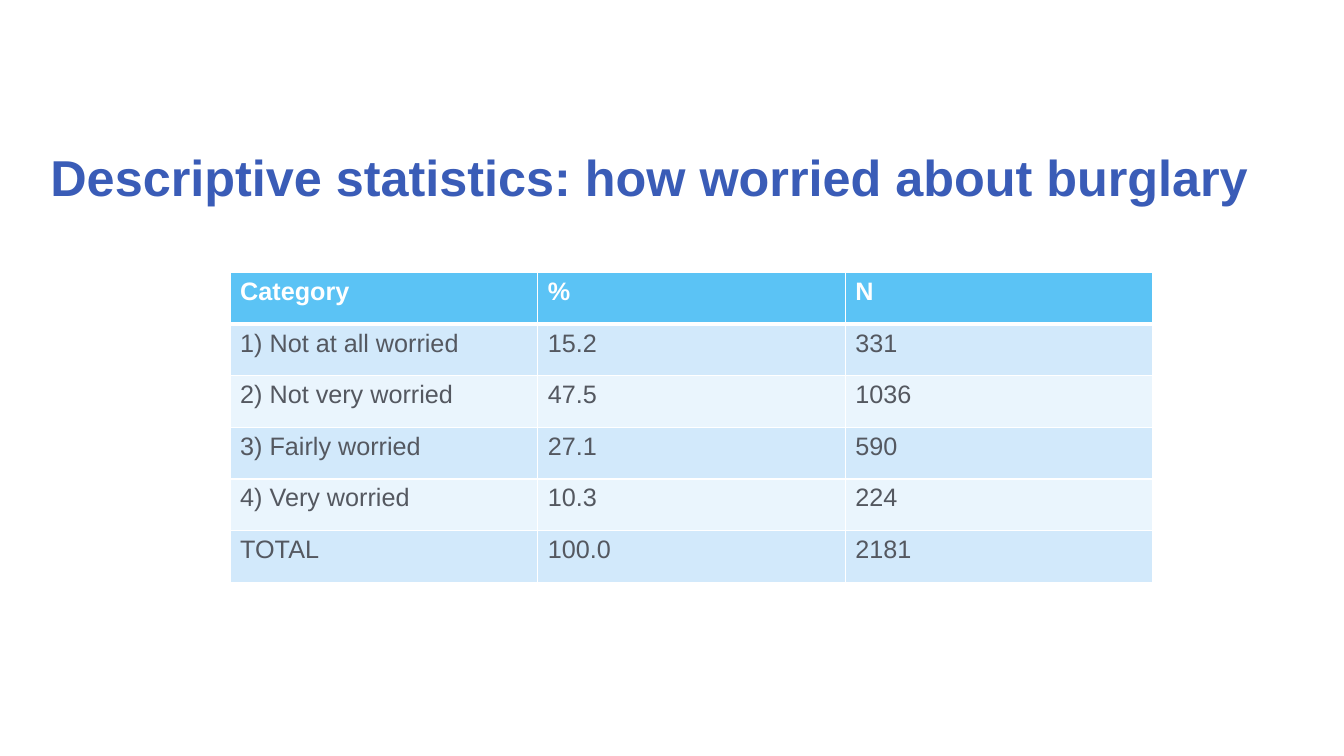
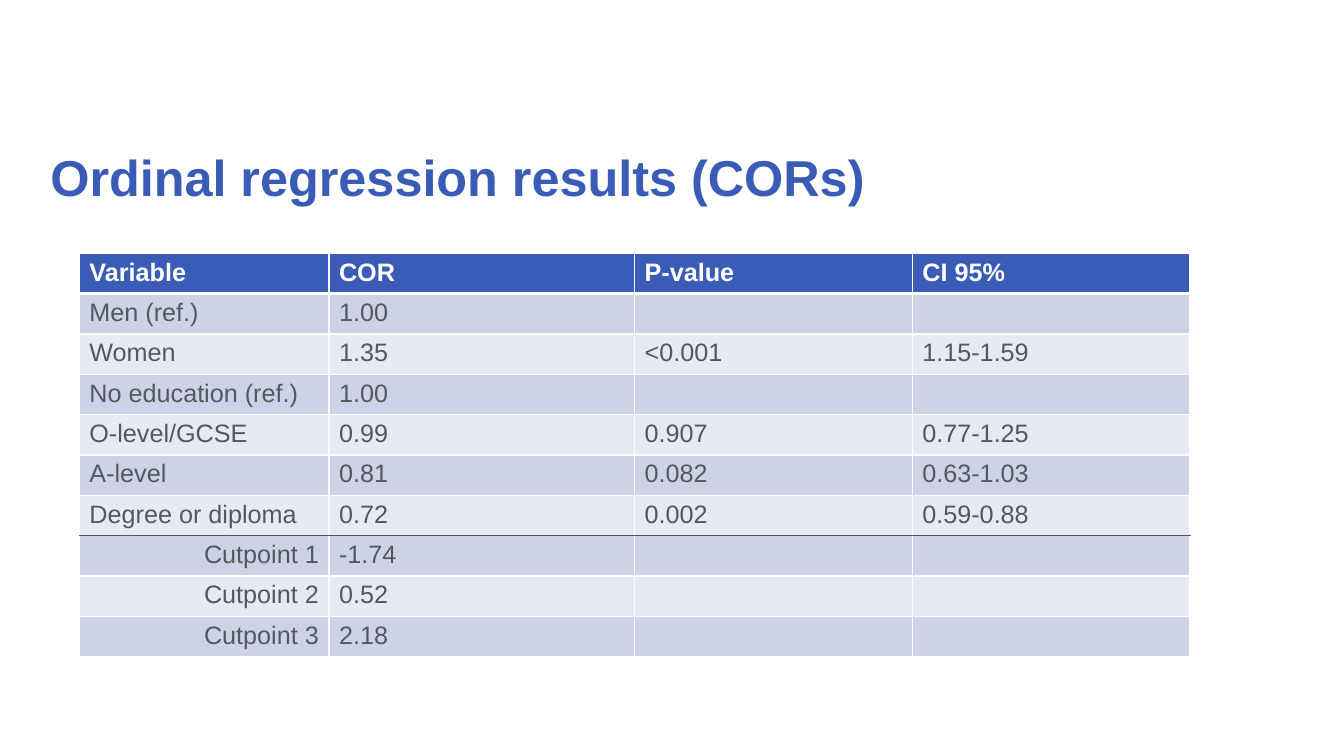
from dataclasses import dataclass
from typing import Optional

from lxml import etree
from pptx import Presentation
from pptx.dml.color import RGBColor
from pptx.enum.text import MSO_ANCHOR, PP_ALIGN
from pptx.oxml.ns import qn
from pptx.util import Cm, Pt

MIDDLE = MSO_ANCHOR.MIDDLE
LEFT = PP_ALIGN.LEFT
RIGHT = PP_ALIGN.RIGHT

COLOURS = {
    "white": "FFFFFF",
    "blue": "3A5CB7",
    "sky": "5BC3F5",
    "text": "545860",
    "sky_band": "D2E9FB",
    "sky_pale": "EAF5FD",
    "blue_band": "CED2E6",
    "blue_pale": "E8EAF3",
}

# Shared text formats
TITLE_FORMAT = {"name": "Arial", "size": Pt(36), "bold": True}
HEADER_FORMAT = {"name": "Arial", "size": Pt(18), "bold": True}
BODY_FORMAT = {"name": "Arial", "size": Pt(18), "bold": False}


@dataclass(frozen=True)
class Palette:
    header: str
    band: str
    pale: str


@dataclass(frozen=True)
class Border:
    colour: str
    points: int


@dataclass(frozen=True)
class TablePage:
    title: str
    left: float
    top: float
    column_widths: tuple[float, ...]
    row_height: float
    palette: Palette
    rows: tuple[tuple[str, ...], ...]
    rule_after: Optional[int] = None  # last row above the dark rule


THIN = Border("white", 1)
THICK = Border("white", 3)
RULE = Border("text", 1)

PAGES = (
    TablePage(
        title="Descriptive statistics: how worried about burglary",
        left=5.8, top=6.87, column_widths=(7.75,) * 3, row_height=1.3,
        palette=Palette("sky", "sky_band", "sky_pale"),
        rows=(
            ("Category", "%", "N"),
            ("1) Not at all worried", "15.2", "331"),
            ("2) Not very worried", "47.5", "1036"),
            ("3) Fairly worried", "27.1", "590"),
            ("4) Very worried", "10.3", "224"),
            ("TOTAL", "100.0", "2181"),
        ),
    ),
    TablePage(
        title="Ordinal regression results (CORs)",
        left=2, top=6.38, column_widths=(6.29, 7.7, 7, 7), row_height=0.99,
        palette=Palette("blue", "blue_band", "blue_pale"),
        rows=(
            ("Variable", "COR", "P-value", "CI 95%"),
            ("Men (ref.)", "1.00", "", ""),
            ("Women", "1.35", "<0.001", "1.15-1.59"),
            ("No education (ref.)", "1.00", "", ""),
            ("O-level/GCSE", "0.99", "0.907", "0.77-1.25"),
            ("A-level", "0.81", "0.082", "0.63-1.03"),
            ("Degree or diploma", "0.72", "0.002", "0.59-0.88"),
            ("Cutpoint 1", "-1.74", "", ""),
            ("Cutpoint 2", "0.52", "", ""),
            ("Cutpoint 3", "2.18", "", ""),
        ),
        rule_after=6,
    ),
)


def rgb(colour: str) -> RGBColor:
    return RGBColor.from_string(COLOURS[colour])


def write(paragraph, text: str, text_format: dict, colour: str) -> None:
    span = paragraph.add_run()
    span.text = text
    for attribute, value in text_format.items():
        setattr(span.font, attribute, value)
    span.font.color.rgb = rgb(colour)


def add_title(page, text: str) -> None:
    box = page.shapes.add_textbox(Cm(1.02), Cm(2.69), Cm(31.85), Cm(3.68))
    frame = box.text_frame
    frame.word_wrap = True
    frame.vertical_anchor = MIDDLE
    paragraph = frame.paragraphs[0]
    paragraph.line_spacing = 0.9
    write(paragraph, text, TITLE_FORMAT, "blue")


def set_borders(cell, above: Border, below: Border) -> None:
    properties = cell._tc.get_or_add_tcPr()
    edges = {"a:lnL": THIN, "a:lnR": THIN, "a:lnT": above, "a:lnB": below}
    for tag, border in edges.items():
        line = etree.SubElement(properties, qn(tag), w=str(Pt(border.points)))
        fill = etree.SubElement(line, qn("a:solidFill"))
        etree.SubElement(fill, qn("a:srgbClr"), val=COLOURS[border.colour])


def border_below(content: TablePage, row: int) -> Border:
    if row == 0:
        return THICK
    return RULE if row == content.rule_after else THIN


def add_data_table(page, content: TablePage) -> None:
    row_count = len(content.rows)
    table = page.shapes.add_table(
        row_count, len(content.column_widths), Cm(content.left), Cm(content.top),
        Cm(sum(content.column_widths)), Cm(content.row_height * row_count),
    ).table
    for column, width in zip(table.columns, content.column_widths):
        column.width = Cm(width)

    palette = content.palette
    for row, values in enumerate(content.rows):
        table.rows[row].height = Cm(content.row_height)
        is_header = row == 0
        banded = palette.band if row % 2 else palette.pale
        fill = palette.header if is_header else banded
        above = THIN if is_header else border_below(content, row - 1)
        below_rule = content.rule_after is not None and row > content.rule_after
        for column, value in enumerate(values):
            cell = table.cell(row, column)
            set_borders(cell, above, border_below(content, row))
            cell.fill.solid()
            cell.fill.fore_color.rgb = rgb(fill)
            if value:
                paragraph = cell.text_frame.paragraphs[0]
                paragraph.alignment = RIGHT if below_rule and column == 0 else LEFT
                write(paragraph, value,
                      HEADER_FORMAT if is_header else BODY_FORMAT,
                      "white" if is_header else "text")


def main() -> None:
    deck = Presentation()
    deck.slide_width = Cm(33.87)
    deck.slide_height = Cm(19.05)
    blank = deck.slide_layouts[6]
    for content in PAGES:
        page = deck.slides.add_slide(blank)
        add_title(page, content.title)
        add_data_table(page, content)
    deck.save("out.pptx")


if __name__ == "__main__":
    main()
